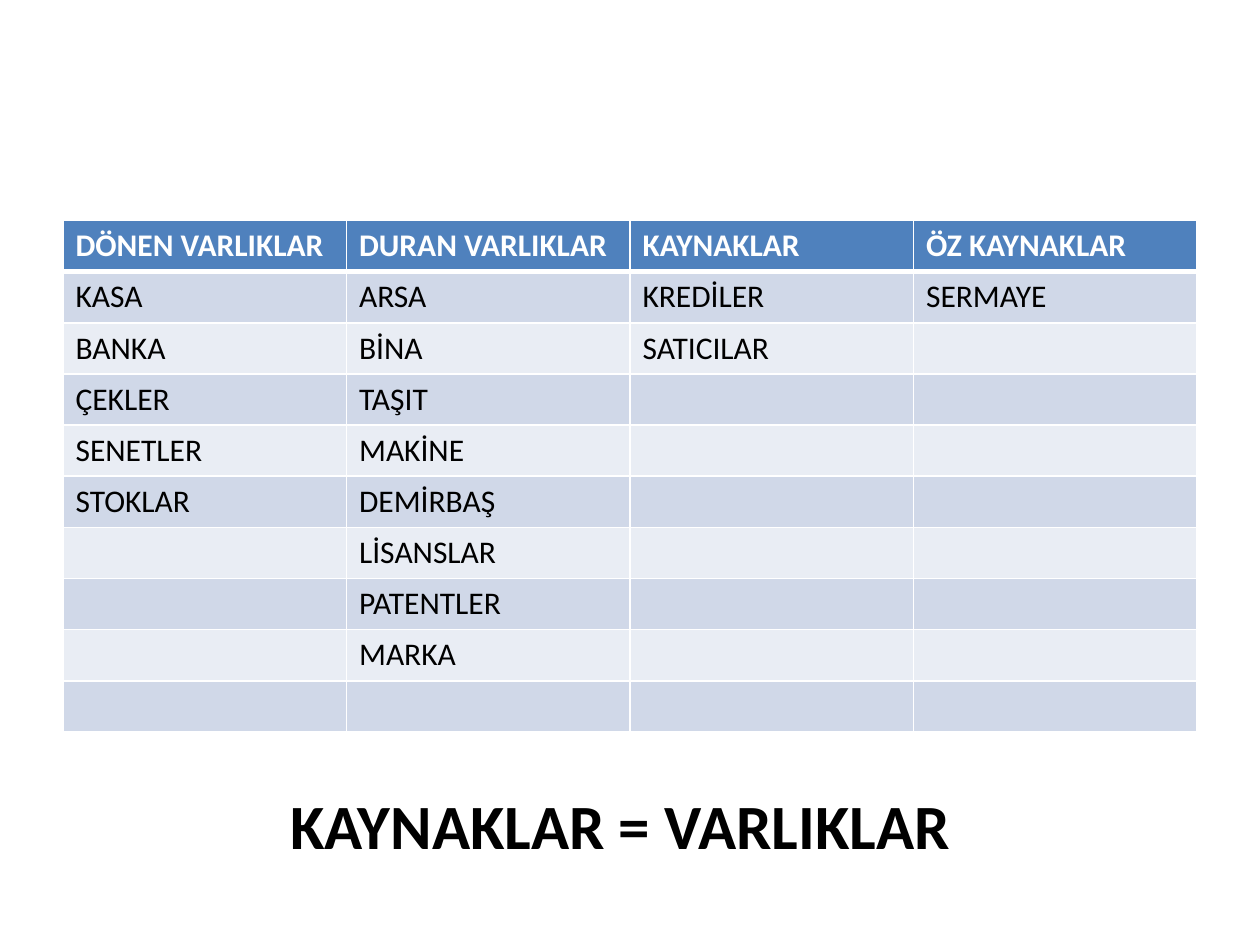
from dataclasses import dataclass
from itertools import zip_longest

from lxml.etree import SubElement
from pptx import Presentation
from pptx.dml.color import RGBColor as RGB
from pptx.enum.text import MSO_ANCHOR as ANCHOR, PP_ALIGN as ALIGN
from pptx.oxml.ns import qn
from pptx.util import Pt

PX = 9144


@dataclass(frozen=True)
class Theme:
    """Colours and type sizes of the slide."""
    font: str = "Calibri"
    ink: str = "000000"
    paper: str = "FFFFFF"
    header: str = "4F81BD"
    bands: tuple = ("D0D8E8", "E9EDF4")
    cell_size: int = 18
    title_size: int = 36
    thin: int = 1
    thick: int = 3


THEME = Theme()
ACCOUNTS = {
    "DÖNEN VARLIKLAR": ["KASA", "BANKA", "ÇEKLER", "SENETLER", "STOKLAR"],
    "DURAN VARLIKLAR": ["ARSA", "BİNA", "TAŞIT", "MAKİNE", "DEMİRBAŞ",
                        "LİSANSLAR", "PATENTLER", "MARKA", ""],
    "KAYNAKLAR": ["KREDİLER", "SATICILAR"],
    "ÖZ KAYNAKLAR": ["SERMAYE"],
}


def write(tf, text, size=THEME.cell_size, color=THEME.ink, bold=False, align=ALIGN.LEFT):
    """Write one formatted paragraph into a text frame."""
    p = tf.paragraphs[0]
    p.alignment = align
    r = p.add_run()
    r.text = text
    r.font.name, r.font.size, r.font.bold = THEME.font, Pt(size), bold
    r.font.color.rgb = RGB.from_string(color)


def add_borders(cell, **widths):
    """Draw cell borders with widths in points, keyed L, R, T and B."""
    tc_pr = cell._tc.get_or_add_tcPr()
    for i, side in enumerate("LRTB"):
        ln = SubElement(tc_pr, qn(f"a:ln{side}"), w=str(Pt(widths.get(side, THEME.thin))))
        fill = SubElement(ln, qn("a:solidFill"))
        SubElement(fill, qn("a:srgbClr"), val=THEME.paper)
        tc_pr.insert(i, ln)


def style_cell(cell, row, text):
    """Fill, border and label a cell according to its row."""
    header = row == 0
    add_borders(cell, B=THEME.thick if header else THEME.thin,
                T=THEME.thick if row == 1 else THEME.thin)
    cell.fill.solid()
    cell.fill.fore_color.rgb = RGB.from_string(
        THEME.header if header else THEME.bands[(row - 1) % 2])
    if text:
        write(cell.text_frame, text, bold=header,
              color=THEME.paper if header else THEME.ink)


def add_accounts(s, x, y, w, h):
    """Add the table with one column for each account group."""
    rows = [tuple(ACCOUNTS), *zip_longest(*ACCOUNTS.values(), fillvalue="")]
    table = s.shapes.add_table(len(rows), len(ACCOUNTS),
                               x * PX, y * PX, w * PX, h * PX).table
    for i, row in enumerate(rows):
        for j, text in enumerate(row):
            style_cell(table.cell(i, j), i, text)


def set_title(s, text, x, y, w, h):
    """Place the title and write its text."""
    sp = s.shapes.title
    sp.left, sp.top, sp.width, sp.height = (v * PX for v in (x, y, w, h))
    tf = sp.text_frame
    tf.word_wrap = True
    tf.vertical_anchor = ANCHOR.TOP
    write(tf, text, size=THEME.title_size, bold=True, align=ALIGN.CENTER)


def main():
    """Build and save the slide."""
    prs = Presentation()
    prs.slide_width, prs.slide_height = 1000 * PX, 750 * PX
    s = prs.slides.add_slide(prs.slide_layouts[5])
    add_accounts(s, 50, 175, 900, 406)
    set_title(s, "KAYNAKLAR = VARLIKLAR", 83, 619, 819, 71)
    prs.save("out.pptx")


if __name__ == "__main__":
    main()
